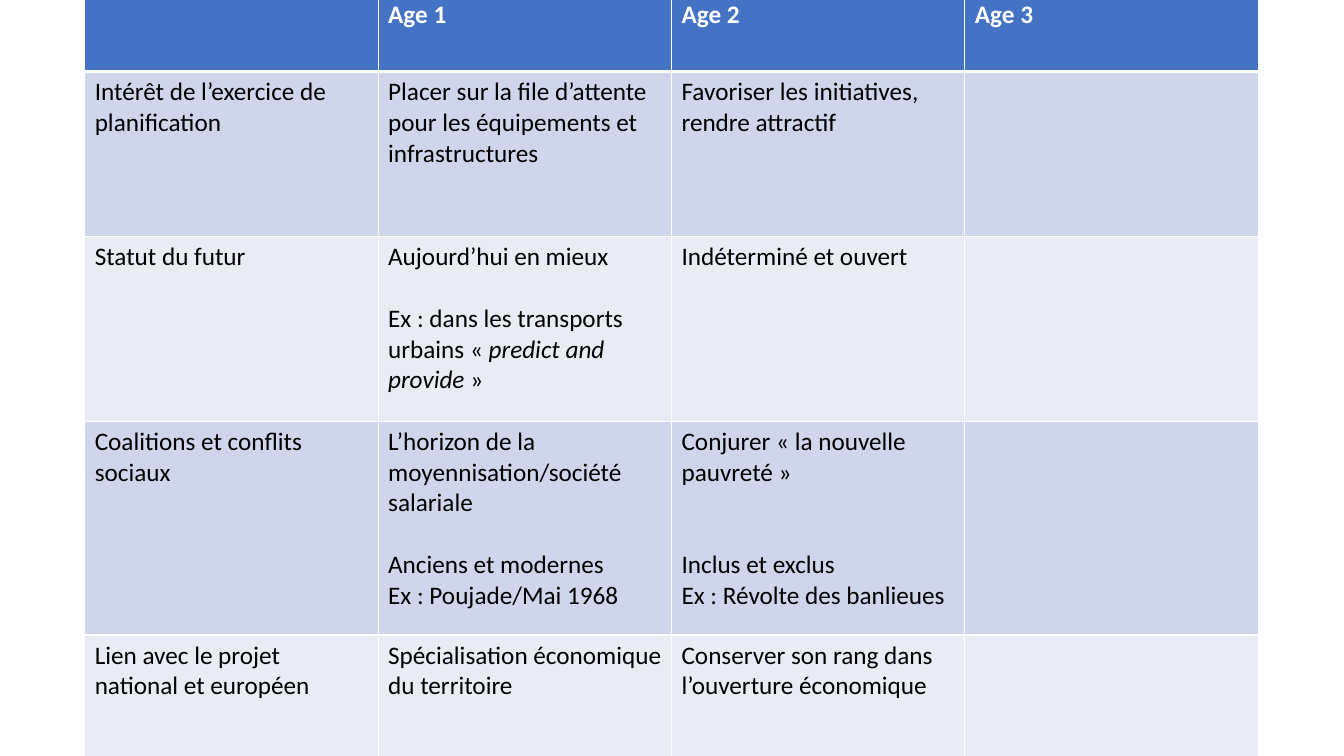
from lxml import etree
from pptx import Presentation
from pptx.dml.color import RGBColor
from pptx.oxml.ns import qn
from pptx.util import Inches, Pt

WHITE = RGBColor(0xFF, 0xFF, 0xFF)
BLACK = RGBColor(0x00, 0x00, 0x00)
HEADER_BLUE = RGBColor(0x44, 0x72, 0xC4)
BAND_DARK = RGBColor(0xCF, 0xD5, 0xEA)
BAND_LIGHT = RGBColor(0xE9, 0xEB, 0xF5)

FONT = "Calibri"
TEXT_SIZE = 18
LINE_HEIGHT = 22
GRID_RULE = 1
HEADER_RULE = 3

TABLE_LEFT, TABLE_TOP = 0.84, -0.06
COLUMN_WIDTH = 2.91
ROW_HEIGHTS = [0.77, 1.64, 1.83, 2.12, 1.26]

# Each cell lists its paragraphs as (lines of space before, text);
# asterisks enclose italics.
ROWS = [
    [[], [(0, "Age 1")], [(0, "Age 2")], [(0, "Age 3")]],
    [
        [(0, "Intérêt de l’exercice de planification")],
        [(0, "Placer sur la file d’attente pour les équipements et infrastructures")],
        [(0, "Favoriser les initiatives, rendre attractif")],
        [],
    ],
    [
        [(0, "Statut du futur")],
        [(0, "Aujourd’hui en mieux"),
         (1, "Ex : dans les transports urbains « *predict and provide *»")],
        [(0, "Indéterminé et ouvert")],
        [],
    ],
    [
        [(0, "Coalitions et conflits sociaux")],
        [(0, "L’horizon de la moyennisation/société salariale"),
         (1, "Anciens et modernes"),
         (0, "Ex : Poujade/Mai 1968")],
        [(0, "Conjurer « la nouvelle pauvreté »"),
         (2, "Inclus et exclus"),
         (0, "Ex : Révolte des banlieues")],
        [],
    ],
    [
        [(0, "Lien avec le projet national et européen")],
        [(0, "Spécialisation économique du territoire")],
        [(0, "Conserver son rang dans l’ouverture économique")],
        [],
    ],
]


def write_paragraphs(cell, paragraphs, color, bold):
    frame = cell.text_frame
    for index, (gap, text) in enumerate(paragraphs):
        para = frame.add_paragraph() if index else frame.paragraphs[0]
        para.space_before = Pt(gap * LINE_HEIGHT)
        for part, words in enumerate(text.split("*")):
            span = para.add_run()
            span.text = words
            span.font.name = FONT
            span.font.size = Pt(TEXT_SIZE)
            span.font.color.rgb = color
            span.font.bold = bold
            span.font.italic = part % 2 == 1


def set_borders(cell, top, bottom):
    """Draw white rules, with the given widths in points above and below."""
    properties = cell._tc.get_or_add_tcPr()
    sides = [("L", GRID_RULE), ("R", GRID_RULE), ("T", top), ("B", bottom)]
    for position, (side, width) in enumerate(sides):
        line = etree.Element(qn(f"a:ln{side}"), w=str(Pt(width)))
        fill = etree.SubElement(line, qn("a:solidFill"))
        etree.SubElement(fill, qn("a:srgbClr"), val=str(WHITE))
        properties.insert(position, line)


def style_cell(cell, row):
    cell.fill.solid()
    if row == 0:
        cell.fill.fore_color.rgb = HEADER_BLUE
    else:
        cell.fill.fore_color.rgb = BAND_DARK if row % 2 else BAND_LIGHT
    set_borders(
        cell,
        HEADER_RULE if row == 1 else GRID_RULE,
        HEADER_RULE if row == 0 else GRID_RULE,
    )


def add_comparison_table(page):
    columns = len(ROWS[0])
    table = page.shapes.add_table(
        len(ROWS), columns, Inches(TABLE_LEFT), Inches(TABLE_TOP),
        Inches(columns * COLUMN_WIDTH), Inches(sum(ROW_HEIGHTS)),
    ).table
    for column in table.columns:
        column.width = Inches(COLUMN_WIDTH)
    for row, cells in enumerate(ROWS):
        table.rows[row].height = Inches(ROW_HEIGHTS[row])
        is_header = row == 0
        for column, paragraphs in enumerate(cells):
            cell = table.cell(row, column)
            style_cell(cell, row)
            write_paragraphs(cell, paragraphs, WHITE if is_header else BLACK, is_header)


def main():
    deck = Presentation()
    deck.slide_width = Inches(13.33)
    deck.slide_height = Inches(7.5)
    page = deck.slides.add_slide(deck.slide_layouts[6])
    add_comparison_table(page)
    deck.save("out.pptx")


if __name__ == "__main__":
    main()
